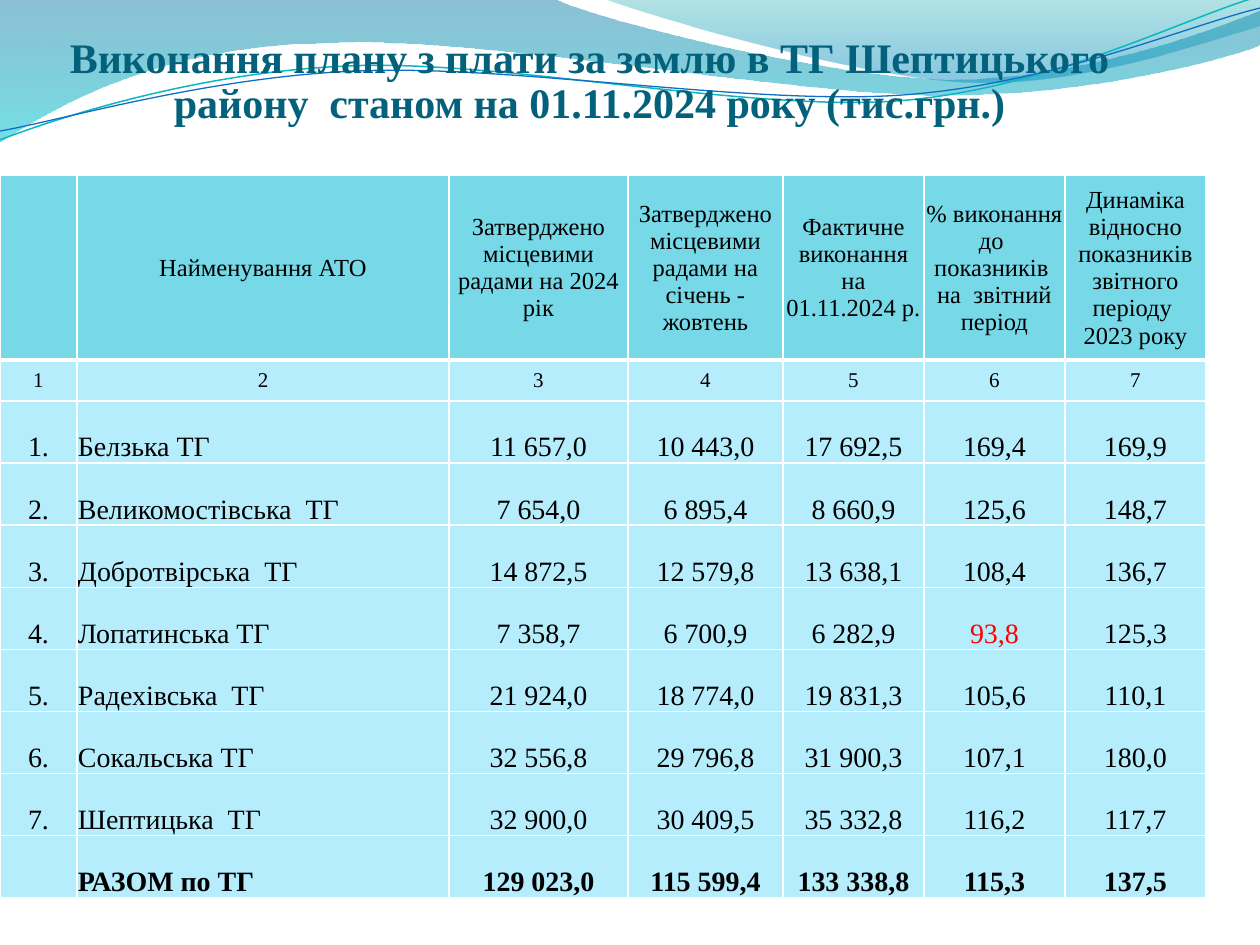
import math

import lxml.etree
import pptx
import pptx.dml.color
import pptx.enum.text
import pptx.oxml.ns
import pptx.util

TITLE = "Виконання плану з плати за землю в ТГ Шептицького району  станом на 01.11.2024 року (тис.грн.)"
HEADER = [
    "",
    "Найменування АТО",
    "Затверджено місцевими радами на 2024 рік",
    "Затверджено місцевими радами на січень - жовтень",
    "Фактичне виконання на 01.11.2024 р.",
    "% виконання до  показників  на  звітний період",
    "Динаміка відносно показників звітного періоду  2023 року",
]
NUMBERS = ["1", "2", "3", "4", "5", "6", "7"]
BODY = [
    ["1.", "Белзька ТГ", "11 657,0", "10 443,0", "17 692,5", "169,4", "169,9"],
    ["2.", "Великомостівська  ТГ", "7 654,0", "6 895,4", "8 660,9", "125,6", "148,7"],
    ["3.", "Добротвірська  ТГ", "14 872,5", "12 579,8", "13 638,1", "108,4", "136,7"],
    ["4.", "Лопатинська ТГ", "7 358,7", "6 700,9", "6 282,9", "93,8", "125,3"],
    ["5.", "Радехівська  ТГ", "21 924,0", "18 774,0", "19 831,3", "105,6", "110,1"],
    ["6.", "Сокальська ТГ", "32 556,8", "29 796,8", "31 900,3", "107,1", "180,0"],
    ["7.", "Шептицька  ТГ", "32 900,0", "30 409,5", "35 332,8", "116,2", "117,7"],
]
TOTAL = ["", "РАЗОМ по ТГ", "129 023,0", "115 599,4", "133 338,8", "115,3", "137,5"]
LOW = (5, 5)

COLS = [77, 372, 179, 155, 141, 141, 141]
BODY_HEIGHT = 497
ROWS = [185, 41] + [BODY_HEIGHT / (len(BODY) + 1)] * (len(BODY) + 1)
TABLE_TOP = 175

WAVES = [
    {
        "points": [
            [(0, 0)], [(554, -1)],
            [(600, 21), (837, 79), (955, 79)], [(1074, 79), (1207, 33), (1260, 11)],
            [(1261, 45)],
            [(1239, 55), (1096, 96), (940, 95)], [(784, 95), (481, 35), (324, 43)],
            [(163, 45), (58, 105), (-1, 142)],
        ],
        "stops": [(0, "0074A1", 45), (1, "00C6CF", 55)],
    },
    {
        "points": [
            [(604, -1)],
            [(641, 14), (859, 78), (969, 82)], [(1079, 87), (1211, 40), (1260, 26)],
            [(1260, 0)],
        ],
        "stops": [(0, "00A1A9", 30), (0.8, "008BBF", 45)],
    },
    {
        "points": [
            [(0, 140)],
            [(60, 117), (199, 72), (349, 66)], [(498, 59), (747, 112), (898, 101)],
            [(1049, 89), (1182, 19), (1257, -3)],
        ],
        "line": ("0AB8BF", 0.85), "center": (629, 72), "tilt": -2.7,
    },
    {
        "points": [
            [(0, 131)],
            [(59, 121), (207, 77), (357, 71)], [(508, 64), (752, 106), (903, 95)],
            [(1053, 84), (1186, 26), (1260, 8)],
        ],
        "line": ("0F6FC6", 0.75), "center": (629, 74), "tilt": -2.7,
    },
]

THEME = {
    "font": "Times New Roman",
    "title": "04617B", "text": "000000", "low": "FF0000",
    "head": "77D9E8", "cell": "B5EDFD", "border": "FFFFFF",
    "title_size": 24, "head_size": 14, "number_size": 12, "body_size": 16,
}
ALIGN = pptx.enum.text.PP_ALIGN
ANCHOR = pptx.enum.text.MSO_ANCHOR


def px(n):
    return pptx.util.Emu(round(n * 914400 / 126))


def rgb(name):
    return pptx.dml.color.RGBColor.from_string(name)


def sub(parent, tag, **attrs):
    return lxml.etree.SubElement(parent, pptx.oxml.ns.qn(tag), attrs)


def untilt(point, center, tilt):
    a = math.radians(-tilt)
    x, y = point[0] - center[0], point[1] - center[1]
    return (center[0] + x * math.cos(a) - y * math.sin(a),
            center[1] + x * math.sin(a) + y * math.cos(a))


def bend(sp, segments):
    lines = sp._element.spPr.findall(".//" + pptx.oxml.ns.qn("a:lnTo"))
    for seg in segments[1:]:
        first, *rest = lines[:len(seg)]
        lines = lines[len(seg):]
        if rest:
            first.tag = pptx.oxml.ns.qn("a:cubicBezTo")
            for line in rest:
                first.append(line[0])
                line.getparent().remove(line)


def add_wave(shapes, wave):
    tilt = wave.get("tilt", 0)
    center = wave.get("center", (0, 0))
    pts = [tuple(px(v) for v in untilt(p, center, tilt))
           for seg in wave["points"] for p in seg]
    fb = shapes.build_freeform(*pts[0])
    fb.add_line_segments(pts[1:], close="stops" in wave)
    sp = fb.convert_to_shape()
    bend(sp, wave["points"])
    sp.rotation = tilt
    sp.shadow.inherit = False
    if "line" in wave:
        color, width = wave["line"]
        sp.fill.background()
        sp.line.color.rgb = rgb(color)
        sp.line.width = pptx.util.Pt(width)
        return
    sp.line.fill.background()
    sp.fill.gradient()
    sp.fill.gradient_angle = 270
    for stop, (pos, color, alpha) in zip(sp.fill.gradient_stops, wave["stops"]):
        stop.position = pos
        stop.color.rgb = rgb(color)
    clrs = sp._element.spPr.findall(".//" + pptx.oxml.ns.qn("a:srgbClr"))
    for clr, (pos, color, alpha) in zip(clrs, wave["stops"]):
        sub(clr, "a:alpha", val=str(alpha * 1000))


def write(tf, text, size, color, bold=False, align=ALIGN.CENTER):
    p = tf.paragraphs[0]
    p.alignment = align
    r = p.add_run()
    r.text = text
    values = {"name": THEME["font"], "size": pptx.util.Pt(size), "bold": bold}
    for name, value in values.items():
        setattr(r.font, name, value)
    r.font.color.rgb = rgb(color)
    return p


def add_borders(cell, top, bottom):
    tc_pr = cell._tc.get_or_add_tcPr()
    for side, width in {"L": 1, "R": 1, "T": top, "B": bottom}.items():
        ln = sub(tc_pr, "a:ln" + side, w=str(pptx.util.Pt(width)))
        sub(sub(ln, "a:solidFill"), "a:srgbClr", val=THEME["border"])


def add_table(shapes):
    rows = [HEADER, NUMBERS] + BODY + [TOTAL]
    table = shapes.add_table(len(ROWS), len(COLS), 0, px(TABLE_TOP),
                             px(sum(COLS)), px(sum(ROWS))).table
    table.horz_banding = False
    for col, width in zip(table.columns, COLS):
        col.width = px(width)
    for row, height in zip(table.rows, ROWS):
        row.height = px(height)
    sizes = [THEME["head_size"], THEME["number_size"]]
    for i, row in enumerate(rows):
        size = sizes[i] if i < 2 else THEME["body_size"]
        for j, text in enumerate(row):
            cell = table.cell(i, j)
            add_borders(cell, 3 if i == 1 else 1, 3 if i == 0 else 1)
            cell.fill.solid()
            cell.fill.fore_color.rgb = rgb(THEME["head" if i == 0 else "cell"])
            cell.vertical_anchor = ANCHOR.MIDDLE if i < 2 else ANCHOR.BOTTOM
            if i != 1:
                for side, inset in {"left": 1, "right": 1, "top": 1, "bottom": 0}.items():
                    setattr(cell, "margin_" + side, px(inset))
            if text:
                color = THEME["low" if (i, j) == LOW else "text"]
                align = ALIGN.LEFT if j == 1 and i > 1 else ALIGN.CENTER
                write(cell.text_frame, text, size, color, row is TOTAL, align)


def main():
    prs = pptx.Presentation()
    prs.slide_width, prs.slide_height = px(1260), px(945)
    s = prs.slides.add_slide(prs.slide_layouts[6])
    for wave in WAVES:
        add_wave(s.shapes, wave)
    tf = s.shapes.add_textbox(0, 0, px(1179), px(165)).text_frame
    tf.word_wrap = True
    tf.vertical_anchor = ANCHOR.MIDDLE
    write(tf, TITLE, THEME["title_size"], THEME["title"], True).line_spacing = 0.9
    add_table(s.shapes)
    prs.save("out.pptx")


if __name__ == "__main__":
    main()
